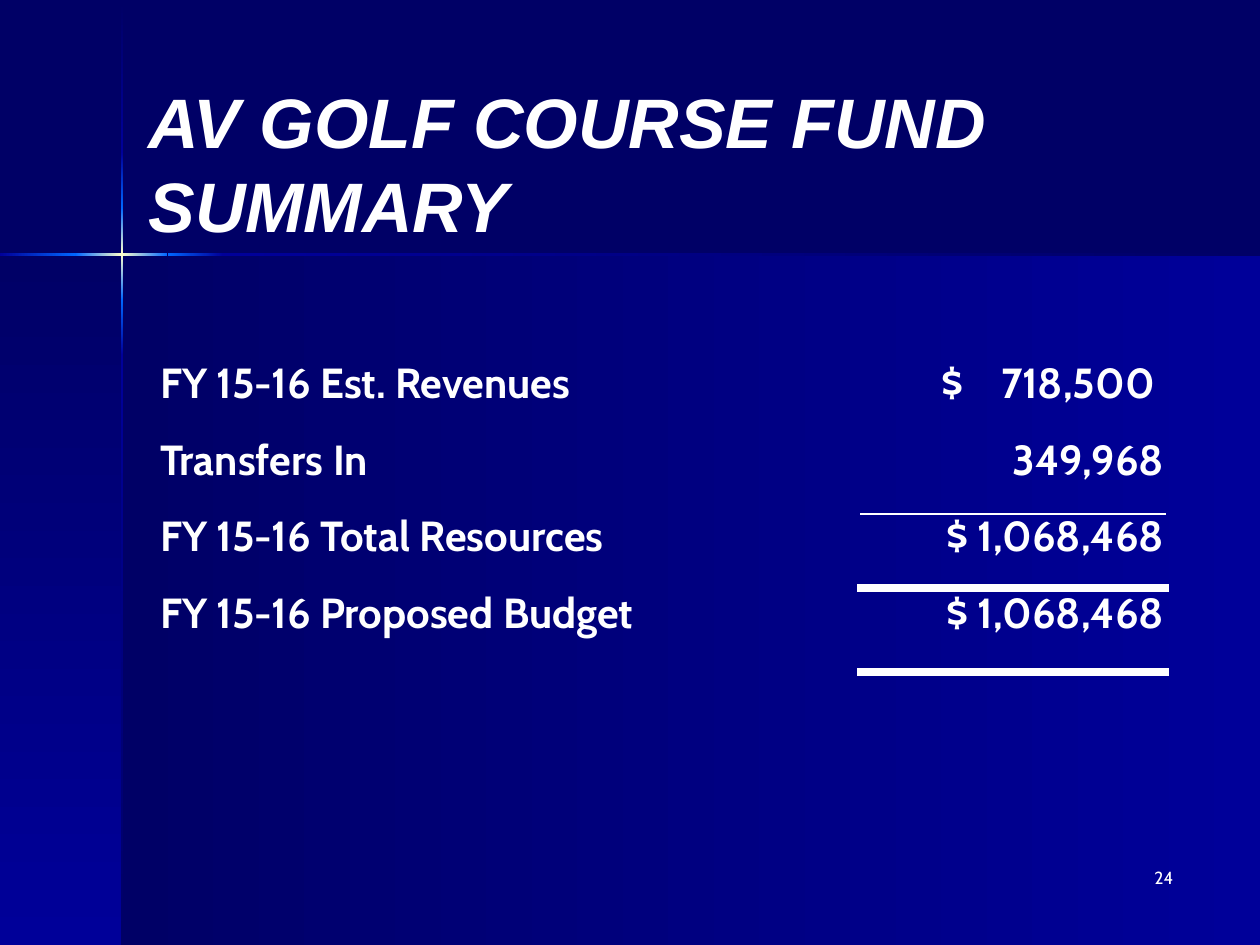
from dataclasses import dataclass, field

import pptx
import pptx.dml.color
import pptx.enum.shapes
import pptx.enum.text
import pptx.oxml
import pptx.oxml.ns
import pptx.util

Inches = pptx.util.Inches
Pt = pptx.util.Pt
Align = pptx.enum.text.PP_ALIGN
Anchor = pptx.enum.text.MSO_ANCHOR


@dataclass(frozen=True)
class Theme:
    navy: str = "000066"
    blue: str = "000099"
    bright: str = "0066FF"
    glow: str = "FFFFCC"
    white: str = "FFFFFF"
    title: dict = field(default_factory=lambda: {
        "name": "Arial", "size": Pt(40), "bold": True, "italic": True})
    body: dict = field(default_factory=lambda: {
        "name": "Cabin", "size": Pt(24), "bold": True})
    number: dict = field(default_factory=lambda: {
        "name": "Cabin", "size": Pt(10)})


@dataclass(frozen=True)
class Band:
    left: float
    top: float
    width: float
    height: float
    colors: tuple[str, ...]
    angle: int


@dataclass(frozen=True)
class FundRow:
    label: str
    amount: tuple[str, ...]


@dataclass(frozen=True)
class Rule:
    top: float
    weight: float


THEME = Theme()
WIDTH, HEIGHT = 10, 7.5
CROSS_X, CROSS_Y = 0.97, 2.02
BEAM = 0.02
WIDE_GAP = Pt(16)
RULE_LEFT, RULE_RIGHT = 6.83, 9.25

PANELS = [
    Band(CROSS_X, CROSS_Y, WIDTH - CROSS_X, HEIGHT - CROSS_Y, (THEME.navy, THEME.blue), 0),
    Band(0, CROSS_Y, CROSS_X, HEIGHT - CROSS_Y, (THEME.navy, THEME.blue), 90),
]
BEAM_COLORS = [
    (THEME.navy, THEME.blue),
    (THEME.blue, THEME.bright),
    (THEME.bright, THEME.glow, THEME.bright),
    (THEME.bright, THEME.blue),
    (THEME.blue, THEME.navy),
]
VERTICAL_STOPS = [0.01, 1.21, 1.65, 2.38, 2.82, HEIGHT]
HORIZONTAL_STOPS = [0, 0.6, 1.33, 1.77, WIDTH]

FUND_ROWS = [
    FundRow("FY 15-16 Est. Revenues", ("$", " ", "718,500 ")),
    FundRow("Transfers In", ("349,968",)),
    FundRow("FY 15-16 Total Resources", ("$ 1,068,468",)),
    FundRow("FY 15-16 Proposed Budget", ("$ 1,068,468",)),
]
RULES = [Rule(4.08, 1), Rule(5.33, 4.5), Rule(4.67, 4.5)]


def rgb(color: str) -> pptx.dml.color.RGBColor:
    return pptx.dml.color.RGBColor.from_string(color)


def add_span(para, text: str, style: dict):
    span = para.add_run()
    span.text = text
    for name, value in style.items():
        setattr(span.font, name, value)
    span.font.color.rgb = rgb(THEME.white)
    return span


def add_band(page, band: Band) -> None:
    shape = page.shapes.add_shape(
        pptx.enum.shapes.MSO_SHAPE.RECTANGLE,
        *map(Inches, (band.left, band.top, band.width, band.height)))
    shape.shadow.inherit = False
    shape.line.fill.background()
    last = len(band.colors) - 1
    stops = "".join(
        f'<a:gs pos="{100000 * index // last}"><a:srgbClr val="{color}"/></a:gs>'
        for index, color in enumerate(band.colors))
    gradient = pptx.oxml.parse_xml(
        f'<a:gradFill {pptx.oxml.ns.nsdecls("a")}><a:gsLst>{stops}</a:gsLst>'
        f'<a:lin ang="{band.angle * 60000}" scaled="0"/></a:gradFill>')
    shape.element.spPr.find(pptx.oxml.ns.qn("a:prstGeom")).addnext(gradient)


def add_beams(page) -> None:
    """Draw the two crossing light beams as chains of gradient bands."""
    vertical = zip(VERTICAL_STOPS, VERTICAL_STOPS[1:], BEAM_COLORS)
    for start, end, colors in vertical:
        add_band(page, Band(CROSS_X - BEAM / 2, start, BEAM, end - start, colors, 90))
    horizontal = zip(HORIZONTAL_STOPS, HORIZONTAL_STOPS[1:], BEAM_COLORS[1:])
    for start, end, colors in horizontal:
        add_band(page, Band(start, CROSS_Y - BEAM / 2, end - start, BEAM, colors, 0))


def add_text(page, place: tuple[float, ...], text: str, style: dict,
             align, anchor, spacing=None) -> None:
    box = page.shapes.add_textbox(*map(Inches, place))
    box.text_frame.word_wrap = True
    box.text_frame.vertical_anchor = anchor
    para = box.text_frame.paragraphs[0]
    para.alignment = align
    para.line_spacing = spacing
    add_span(para, text, style)


def fill_cell(cell, lines: list[tuple[str, ...]], align) -> None:
    cell.margin_top = Inches(0.45)
    frame = cell.text_frame
    for index, parts in enumerate(lines):
        para = frame.add_paragraph() if index else frame.paragraphs[0]
        para.alignment = align
        para.line_spacing = 1.5
        for part in parts:
            span = add_span(para, part, THEME.body)
            if part == " ":
                span.font._element.set("spc", str(int(WIDE_GAP.pt * 100)))


def add_fund_table(page) -> None:
    frame = page.shapes.add_table(2, 2, *map(Inches, (1.17, 2.19, 8.17, 4.36)))
    table = frame.table
    table.first_row = table.horz_banding = False
    no_grid = "{2D5ABB26-0587-4C30-8999-92F81FD0307C}"
    table._tbl.tblPr.find(pptx.oxml.ns.qn("a:tableStyleId")).text = no_grid
    for column, width in zip(table.columns, (5.19, 2.98)):
        column.width = Inches(width)
    for row, height in zip(table.rows, (3.65, 0.71)):
        row.height = Inches(height)
    for cell in table.iter_cells():
        cell.fill.background()
    fill_cell(table.cell(0, 0), [(row.label,) for row in FUND_ROWS], Align.LEFT)
    fill_cell(table.cell(0, 1), [row.amount for row in FUND_ROWS], Align.RIGHT)


def add_rule(page, rule: Rule) -> None:
    line = page.shapes.add_connector(
        pptx.enum.shapes.MSO_CONNECTOR.STRAIGHT,
        *map(Inches, (RULE_LEFT, rule.top, RULE_RIGHT, rule.top)))
    line.line.color.rgb = rgb(THEME.white)
    line.line.width = Pt(rule.weight)
    properties = line.element.spPr
    properties.find(pptx.oxml.ns.qn("a:ln")).set("cap", "sq")
    properties.append(
        pptx.oxml.parse_xml(f'<a:effectLst {pptx.oxml.ns.nsdecls("a")}/>'))


def main() -> None:
    deck = pptx.Presentation()
    deck.slide_width, deck.slide_height = Inches(WIDTH), Inches(HEIGHT)
    page = deck.slides.add_slide(deck.slide_layouts[6])
    page.background.fill.solid()
    page.background.fill.fore_color.rgb = rgb(THEME.navy)

    for panel in PANELS:
        add_band(page, panel)
    add_beams(page)
    add_text(page, (7.33, 6.83, 2.08, 0.5), "24", THEME.number, Align.RIGHT, Anchor.TOP)
    add_fund_table(page)
    add_text(page, (1.08, 0.75, 8.25, 1.08), "AV GOLF COURSE FUND SUMMARY",
             THEME.title, Align.LEFT, Anchor.MIDDLE, Pt(48))
    for rule in RULES:
        add_rule(page, rule)
    deck.save("out.pptx")


if __name__ == "__main__":
    main()
